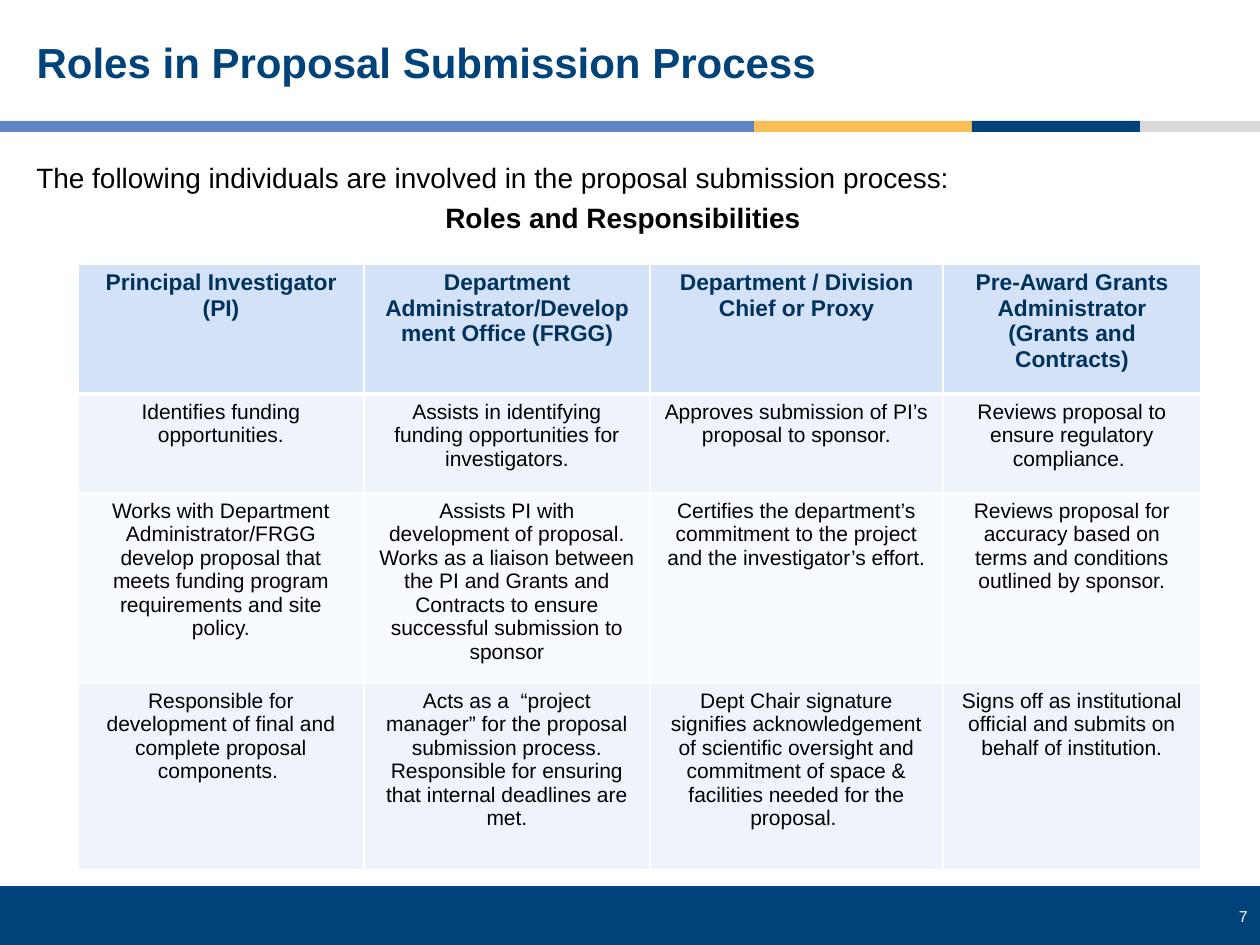
from lxml import etree
from pptx import Presentation, util as u
from pptx.dml.color import RGBColor
from pptx.enum import shapes, text
from pptx.oxml.ns import qn


def px(*nums):
    """Turn pixels (126 to the inch) into EMU."""
    return [u.Emu(round(n * 914400 / 126)) for n in nums]


def write(frame, words, size=12, color="000000", bold=False,
          align="LEFT", anchor="TOP", line=None):
    frame.word_wrap = True
    frame.vertical_anchor = getattr(text.MSO_ANCHOR, anchor)
    frame.text = words
    for para in frame.paragraphs:
        para.alignment = getattr(text.PP_ALIGN, align)
        para.line_spacing = line
        para.space_before = u.Pt(0)
        font = para.font
        font.name, font.size, font.bold = "Arial", u.Pt(size), bold
        font.color.rgb = RGBColor.from_string(color)


NAVY, BLUE, GOLD, GRAY = "00437B", "6283C2", "F8BF56", "D9D9D9"

prs = Presentation()
prs.slide_width, prs.slide_height = px(1260, 945)
slide = prs.slides.add_slide(prs.slide_layouts[5])

# Footer band and the striped rule under the title
bars = [
    (0, 886, 1260, 59, NAVY),
    (0, 121, 754, 11, BLUE),
    (754, 121, 218, 11, GOLD),
    (972, 121, 168, 11, NAVY),
    (1140, 121, 120, 11, GRAY),
]
for *box, color in bars:
    bar = slide.shapes.add_shape(shapes.MSO_SHAPE.RECTANGLE, *px(*box))
    bar.shadow.inherit = False
    bar.fill.solid()
    bar.fill.fore_color.rgb = RGBColor.from_string(color)
    bar.line.fill.background()

title = slide.shapes.title
title.left, title.top, title.width, title.height = px(24, 21, 1206, 87)
write(title.text_frame, "Roles in Proposal Submission Process", size=24,
      color=NAVY, bold=True, anchor="MIDDLE", line=0.9)

notes = [
    ((24, 158, 1206, 40),
     "The following individuals are involved in the proposal submission process:",
     dict(size=16, line=0.9)),
    ((53, 194, 1148, 47), "Roles and Responsibilities ",
     dict(size=16, bold=True, align="CENTER")),
    ((1173, 901, 87, 32), "7", dict(size=9, color="FFFFFF", align="RIGHT")),
]
for box, words, style in notes:
    write(slide.shapes.add_textbox(*px(*box)).text_frame, words, **style)

# Roles table
rows = [
    ["Principal Investigator (PI)",
     "Department Administrator/Development Office (FRGG)",
     "Department / Division Chief or Proxy",
     "Pre-Award Grants Administrator (Grants and Contracts)"],
    ["Identifies funding opportunities.",
     "Assists in identifying funding opportunities for investigators.",
     "Approves submission of PI’s proposal to sponsor.",
     "Reviews proposal to ensure regulatory compliance. "],
    ["Works with Department Administrator/FRGG develop proposal that meets "
     "funding program requirements and site policy.",
     "Assists PI with development of proposal.\nWorks as a liaison between the "
     "PI and Grants and Contracts to ensure successful submission to sponsor",
     "Certifies the department’s commitment to the project and the "
     "investigator’s effort.",
     "Reviews proposal for accuracy based on terms and conditions outlined "
     "by sponsor."],
    ["Responsible for development of final and complete proposal components. ",
     "Acts as a  “project manager” for the proposal submission process. "
     "Responsible for ensuring that internal deadlines are met.",
     "Dept Chair signature signifies acknowledgement of scientific oversight "
     "and commitment of space & facilities needed for the proposal. ",
     "Signs off as institutional official and submits on behalf of institution."],
]
wides, highs = [286, 286, 293, 258], [130, 99, 190, 187]
fills = ["D4E2F8", "EFF4FC", "F7FAFE", "EFF4FC"]
head = dict(size=13, color="00325C", bold=True)

table = slide.shapes.add_table(
    4, 4, *px(78, 264, sum(wides), sum(highs))).table
for col, wide in zip(table.columns, px(*wides)):
    col.width = wide
for r, (row, high) in enumerate(zip(table.rows, px(*highs))):
    row.height = high
    for cell, words in zip(row.cells, rows[r]):
        write(cell.text_frame, words, align="CENTER", **({} if r else head))
        cell.fill.solid()
        cell.fill.fore_color.rgb = RGBColor.from_string(fills[r])
        props = cell._tc.get_or_add_tcPr()
        for i, side in enumerate("LRTB"):
            thick = (r, side) in [(0, "B"), (1, "T")]
            edge = etree.Element(qn("a:ln" + side), w=str(u.Pt(3 if thick else 1)))
            paint = etree.SubElement(edge, qn("a:solidFill"))
            etree.SubElement(paint, qn("a:srgbClr"), val="FFFFFF")
            props.insert(i, edge)

prs.save("out.pptx")
